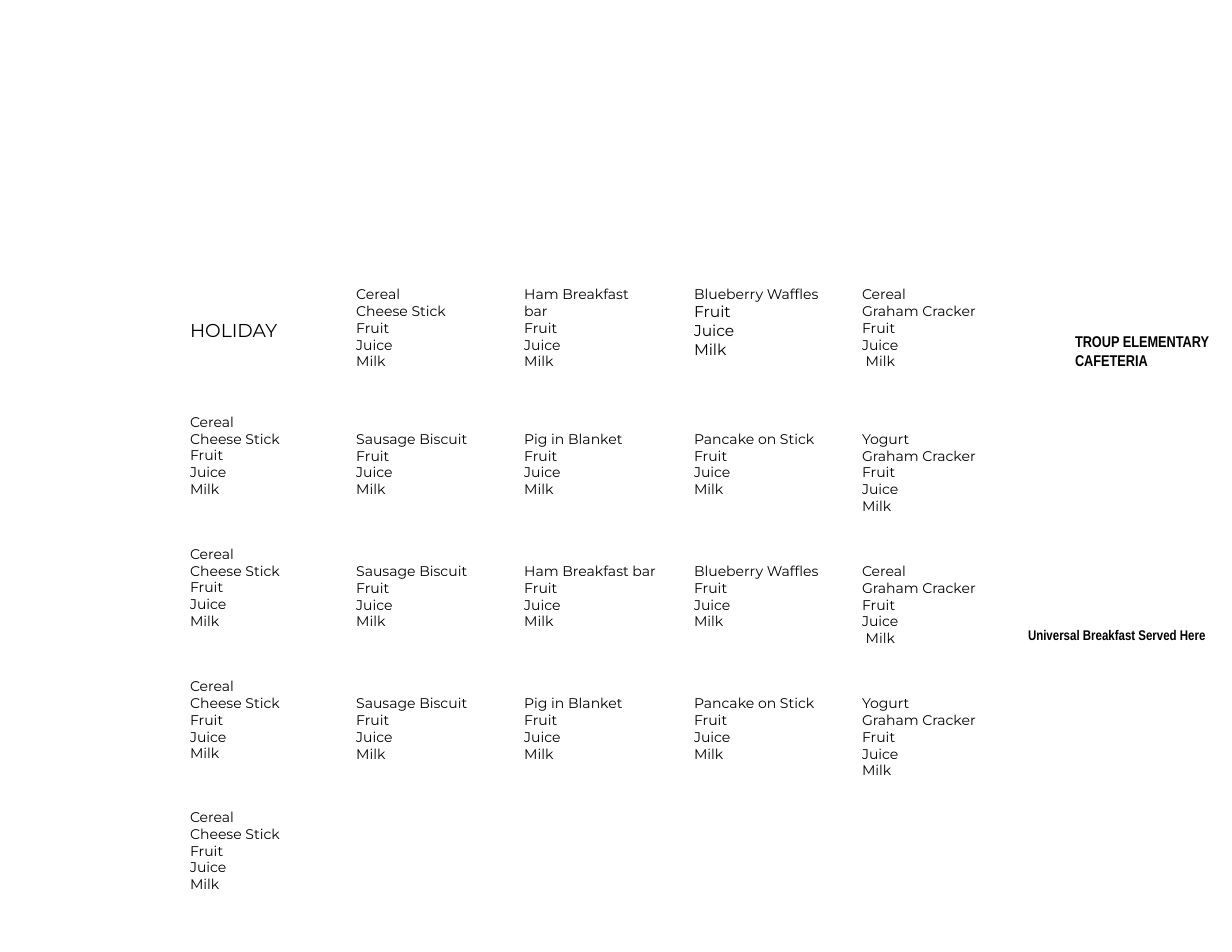
from pptx import Presentation
from pptx.dml.color import RGBColor
from pptx.enum.text import MSO_ANCHOR as Anchor
from pptx.enum.text import MSO_AUTO_SIZE as AutoSize
from pptx.enum.text import PP_ALIGN as Align
from pptx.util import Pt

BLACK = "000000"
LINE = 10.9
COLUMNS = [115.1, 221.9, 329.9, 439.1, 547.1]
ROWS = [180, 262.1, 347, 432, 516.2]
CELL_WIDTH = 95.8
SIDES = ["Fruit", "Juice", "Milk"]
SPACED_SIDES = ["Fruit", "Juice", " Milk"]

HOLIDAY = ["HOLIDAY"]
CEREAL = ["Cereal", "Cheese Stick"] + SIDES
CEREAL_GRAHAM = ["Cereal", "Graham Cracker"] + SPACED_SIDES
YOGURT = ["Yogurt", "Graham Cracker"] + SIDES
BISCUIT = ["Sausage Biscuit"] + SIDES
PIG = ["Pig in Blanket"] + SIDES
HAM = ["Ham Breakfast bar"] + SIDES
WAFFLES = ["Blueberry Waffles"] + SIDES
PANCAKE = ["Pancake on Stick"] + SIDES

WEEKS = [
    [HOLIDAY, CEREAL, HAM, WAFFLES, CEREAL_GRAHAM],
    [CEREAL, BISCUIT, PIG, PANCAKE, YOGURT],
    [CEREAL, BISCUIT, HAM, WAFFLES, CEREAL_GRAHAM],
    [CEREAL, BISCUIT, PIG, PANCAKE, YOGURT],
    [CEREAL],
]
WIDE_CELLS = {(1, 1): 102.2, (2, 2): 108.7}


def color(value):
    return RGBColor.from_string(value)


def add_cell(slide, left, top, width, height):
    right, bottom = Pt(left + width), Pt(top + height)
    builder = slide.shapes.build_freeform(Pt(left), Pt(top))
    builder.add_line_segments([(right, Pt(top)), (right, bottom), (Pt(left), bottom)])
    shape = builder.convert_to_shape()
    shape.shadow.inherit = False
    shape.fill.background()
    shape.line.fill.background()
    return shape


def write_lines(shape, lines, sizes, font_name, inset=0, bold=False):
    frame = shape.text_frame
    frame.word_wrap = True
    frame.auto_size = AutoSize.SHAPE_TO_FIT_TEXT
    frame.vertical_anchor = Anchor.TOP
    frame.margin_top = Pt(3.6 + inset)
    for index, (line, size) in enumerate(zip(lines, sizes)):
        paragraph = frame.paragraphs[0] if index == 0 else frame.add_paragraph()
        paragraph.alignment = Align.LEFT
        run = paragraph.add_run()
        run.text = line
        run.font.size = Pt(size)
        run.font.name = font_name
        run.font.bold = bold
        run.font.color.rgb = color(BLACK)


def add_menu_calendar(slide):
    for week, (top, meals) in enumerate(zip(ROWS, WEEKS)):
        for day, (left, lines) in enumerate(zip(COLUMNS, meals)):
            sizes = [9] * len(lines)
            inset = LINE if week > 0 and day > 0 else 0
            height = 72.7 if week > 0 and day > 2 else 61.9
            if lines == HOLIDAY:
                sizes, inset, height = [12], 2 * LINE - 0.4, 43.9
            elif week == 0 and lines == WAFFLES:
                sizes, height = [9, 10, 10, 10], 65.5
            width = WIDE_CELLS.get((week, day), CELL_WIDTH)
            cell = add_cell(slide, left, top, width, height)
            write_lines(cell, lines, sizes, "Montserrat", inset)


def add_side_note(slide, box, lines, size, inset):
    note = slide.shapes.add_textbox(*[Pt(length) for length in box])
    write_lines(note, lines, [size] * len(lines), "Arial Narrow", inset, True)


def main():
    presentation = Presentation()
    presentation.slide_width = Pt(792)
    presentation.slide_height = Pt(612)
    slide = presentation.slides.add_slide(presentation.slide_layouts[6])
    add_menu_calendar(slide)
    add_side_note(slide, (684, 198, 102.2, 43.9),
                  ["TROUP ELEMENTARY", "CAFETERIA"], 10, 11.8)
    add_side_note(slide, (653.8, 377.3, 131.8, 40.3),
                  ["Universal Breakfast Served Here"], 9, 22)
    presentation.save("out.pptx")


if __name__ == "__main__":
    main()
